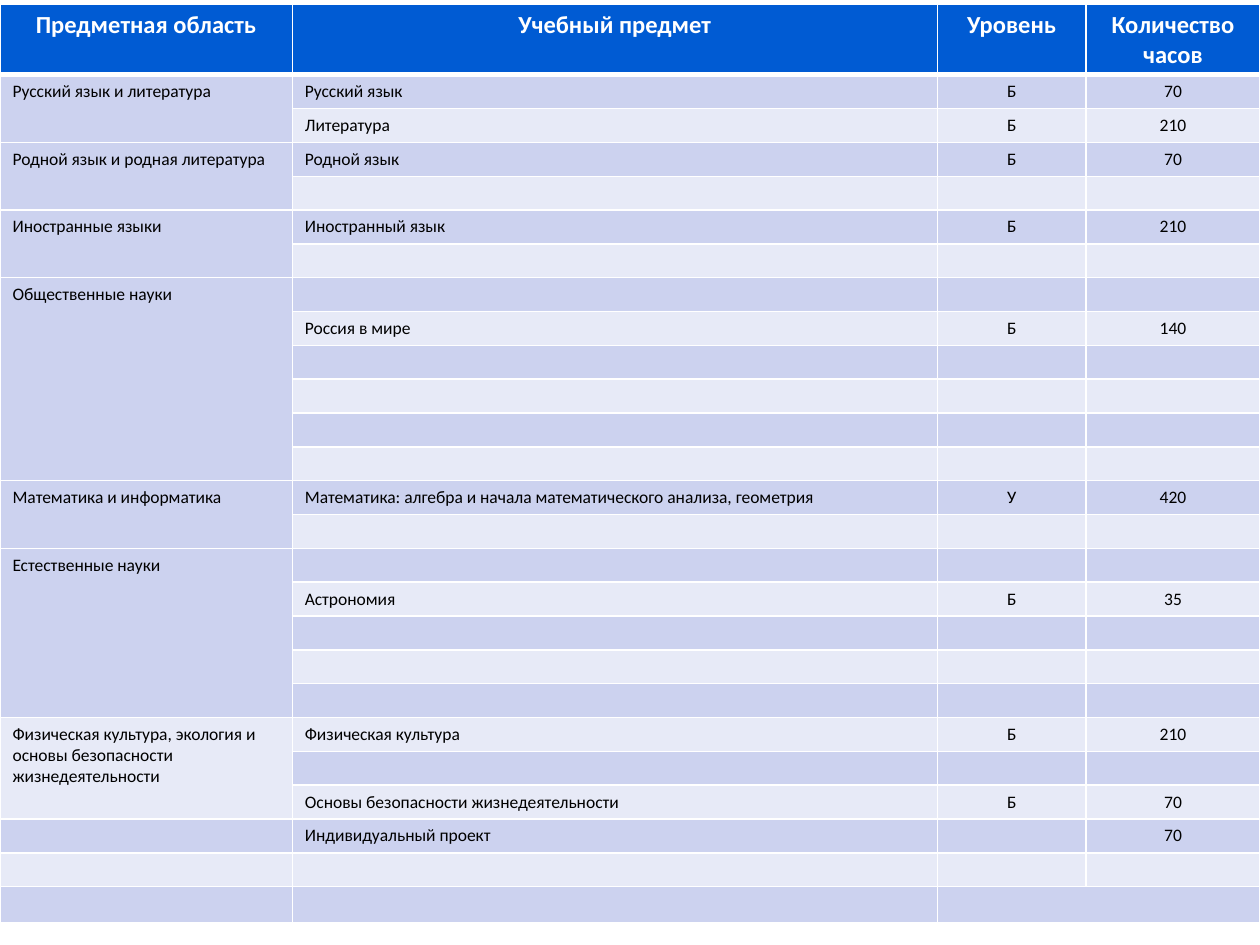
from dataclasses import dataclass

from lxml.etree import SubElement
from pptx import Presentation
from pptx.dml.color import RGBColor as Color
from pptx.enum.text import PP_ALIGN as Align
from pptx.oxml.ns import qn
from pptx.util import Inches, Pt


@dataclass(frozen=True)
class Theme:
    font: str = "Calibri"
    header_size: int = 14
    body_size: int = 10
    header_fill: str = "005BD3"
    dark_band: str = "CCD2EF"
    light_band: str = "E7EAF7"
    white: str = "FFFFFF"
    black: str = "000000"
    border: int = 1
    header_border: int = 3


THEME = Theme()
COLUMN_WIDTHS = (2.32, 5.12, 1.18, 1.38)
HEADER_HEIGHT, LAST_HEIGHT = 0.55, 0.29
HEADERS = ("Предметная область", "Учебный предмет", "Уровень", "Количество часов")
EMPTY = ("", "", "")

# Each subject area with its rows of subject, level and hours
AREAS = [
    ("Русский язык и литература",
     [("Русский язык", "Б", "70"), ("Литература", "Б", "210")]),
    ("Родной язык и родная литература", [("Родной язык", "Б", "70"), EMPTY]),
    ("Иностранные языки", [("Иностранный язык", "Б", "210"), EMPTY]),
    ("Общественные науки",
     [EMPTY, ("Россия в мире", "Б", "140"), EMPTY, EMPTY, EMPTY, EMPTY]),
    ("Математика и информатика",
     [("Математика: алгебра и начала математического анализа, геометрия", "У", "420"),
      EMPTY]),
    ("Естественные науки", [EMPTY, ("Астрономия", "Б", "35"), EMPTY, EMPTY, EMPTY]),
    ("Физическая культура, экология и основы безопасности жизнедеятельности",
     [("Физическая культура", "Б", "210"), EMPTY,
      ("Основы безопасности жизнедеятельности", "Б", "70")]),
    ("", [("Индивидуальный проект", "", "70")]),
    ("", [EMPTY]),
    ("", [EMPTY]),
]


def add_borders(cell, top, bottom):
    properties = cell._tc.get_or_add_tcPr()
    sides = {"L": THEME.border, "R": THEME.border, "T": top, "B": bottom}
    for side, width in sides.items():
        line = SubElement(properties, qn(f"a:ln{side}"), w=str(Pt(width)))
        fill = SubElement(line, qn("a:solidFill"))
        SubElement(fill, qn("a:srgbClr"), val=THEME.white)


def style_cell(cell, row, column):
    is_header = row == 0
    add_borders(cell,
                THEME.header_border if row == 1 else THEME.border,
                THEME.header_border if is_header else THEME.border)
    band = THEME.dark_band if row % 2 else THEME.light_band
    cell.fill.solid()
    cell.fill.fore_color.rgb = Color.from_string(THEME.header_fill if is_header else band)
    cell.margin_left = cell.margin_right = Inches(0.1)
    cell.margin_top, cell.margin_bottom = Inches(0.05), Inches(0.04)

    paragraph = cell.text_frame.paragraphs[0]
    paragraph.alignment = Align.CENTER if is_header or column >= 2 else Align.LEFT
    size = THEME.header_size if is_header else THEME.body_size
    font = paragraph.font
    font.name, font.size, font.bold = THEME.font, Pt(size), is_header
    font.color.rgb = Color.from_string(THEME.white if is_header else THEME.black)
    if not cell.text:
        # Keeps empty rows as low as the filled ones
        SubElement(paragraph._p, qn("a:endParaRPr"), sz=str(size * 100))


def add_curriculum(slide, left, top, width, height):
    rows = [HEADERS]
    merges = []
    for area, subjects in AREAS:
        if len(subjects) > 1:
            merges.append((len(rows), len(rows) + len(subjects) - 1))
        for index, subject in enumerate(subjects):
            rows.append(("" if index else area, *subject))

    table = slide.shapes.add_table(len(rows), len(HEADERS), Inches(left), Inches(top),
                                   Inches(width), Inches(height)).table
    for column, column_width in zip(table.columns, COLUMN_WIDTHS):
        column.width = Inches(column_width)
    body_height = (height - HEADER_HEIGHT - LAST_HEIGHT) / (len(rows) - 2)
    heights = [HEADER_HEIGHT] + [body_height] * (len(rows) - 2) + [LAST_HEIGHT]

    for row, (texts, row_height) in enumerate(zip(rows, heights)):
        table.rows[row].height = Inches(row_height)
        for column, text in enumerate(texts):
            cell = table.cell(row, column)
            if text:
                cell.text = text
            style_cell(cell, row, column)

    # Areas span their subjects; the last row joins level and hours
    for first, last in merges:
        table.cell(first, 0).merge(table.cell(last, 0))
    bottom = len(rows) - 1
    table.cell(bottom, 2).merge(table.cell(bottom, 3))


def main():
    presentation = Presentation()
    presentation.slide_width, presentation.slide_height = Inches(10), Inches(7.5)
    slide = presentation.slides.add_slide(presentation.slide_layouts[6])
    add_curriculum(slide, 0, 0.03, 10, 7.29)
    presentation.save("out.pptx")


if __name__ == "__main__":
    main()
